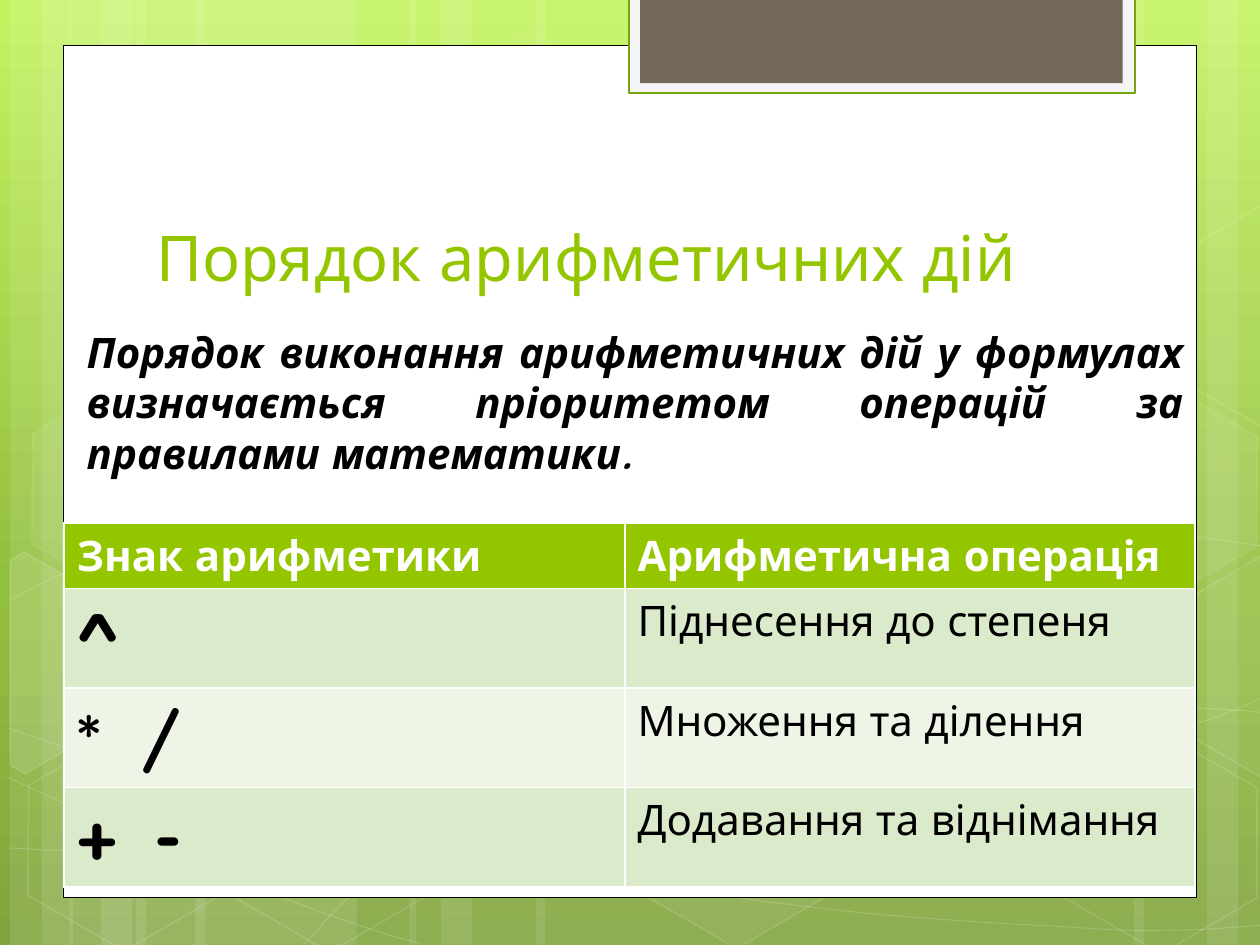
import copy
import dataclasses
import math

import lxml.etree
import pptx
import pptx.dml.color
import pptx.enum.shapes
import pptx.enum.text
import pptx.oxml.ns
import pptx.util

Inches = pptx.util.Inches
Pt = pptx.util.Pt
Shapes = pptx.enum.shapes.MSO_SHAPE
Align = pptx.enum.text.PP_ALIGN
Anchor = pptx.enum.text.MSO_ANCHOR
qn = pptx.oxml.ns.qn


@dataclasses.dataclass(frozen=True)
class Theme:
    font: str = "Quicksand"
    green: str = "94C600"
    frame_line: str = "74A510"
    white: str = "FFFFFF"
    black: str = "000000"
    tab_outer: str = "F5F5F5"
    tab_inner: str = "71685A"
    band_dark: str = "DCEACC"
    band_light: str = "EEF5E7"
    backdrop: tuple = ((0, "C3F35F"), (0.62, "93BF3F"), (1, "81A53E"))
    title_size: int = 36
    text_size: int = 24
    sign_size: int = 40


THEME = Theme()

STRIPES = [
    (1.08, 1.75), (0.08, 0.5), (0.33, 0.83), (1.55, 1.75), (0.55, 0.5), (0.8, 0.83),
    (7.33, 1.75), (9.58, 0.5), (9, 0.83), (4.25, 3.08), (3.25, 0.5), (3.5, 0.83),
]

STRAIGHT_END = (9.53, 5.62)
CURVES = [
    [(0.07, 6.73), (0.61, 6.76), (1.15, 6.79), (1.9, 6.78), (2.65, 6.77), (3.58, 6.75),
     (4.58, 6.65), (5.58, 6.55), (7, 6.36), (7.92, 6.17), (8.83, 5.98), (9.77, 5.68),
     (10.07, 5.51)],
    [(0.07, 4.77), (0.36, 4.61), (0.65, 4.46), (1.21, 4.31), (1.78, 4.16), (2.59, 3.94),
     (3.47, 3.87), (4.36, 3.8), (5.44, 3.79), (6.54, 3.87), (7.64, 3.95), (9.47, 4.26),
     (10.07, 4.34)],
    [(0.06, 6.17), (1.27, 6.72), (2.47, 7.27), (3.34, 7.49)],
    [(0.07, 5.78), (0.38, 5.89), (0.7, 6), (1.28, 6.16), (1.86, 6.31), (2.73, 6.56),
     (3.57, 6.73), (4.4, 6.9), (5.45, 7.08), (6.28, 7.18), (7.11, 7.29), (8, 7.33),
     (8.53, 7.36), (9.05, 7.4), (9.19, 7.38), (9.45, 7.38), (9.71, 7.37), (9.89, 7.35),
     (10.07, 7.34)],
    [(2.42, 7.49), (2.6, 7.29), (2.78, 7.09), (3.02, 6.91), (3.26, 6.73), (3.6, 6.53),
     (3.88, 6.39), (4.16, 6.25), (4.33, 6.19), (4.7, 6.09), (5.06, 5.99), (5.73, 5.85),
     (6.08, 5.78), (6.44, 5.71), (6.49, 5.71), (6.8, 5.69), (7.11, 5.66), (7.6, 5.63),
     (7.94, 5.62), (8.29, 5.61), (8.86, 5.62), (8.86, 5.62), STRAIGHT_END, (9.71, 5.63),
     (9.88, 5.64), (9.97, 5.65), (10.06, 5.66), (10.03, 5.65), (10.06, 5.66)],
]

HEXAGONS = [
    (3.34, 0.36, 4, 8), (4.97, 5.89, 6, 12), (0.11, 5.91, 0, 12), (0.14, 3.12, 7, 8),
    (1.74, 5.92, 0, 12), (7.53, 4.53, 10, 12), (8.34, 5.93, 0, 12), (8.34, 3.14, 7, 8),
]

CUT_HEXAGONS = [
    ([(0.08, 4.45), (0.19, 4.38), (0.96, 4.82), (0.95, 5.7), (0.2, 6.14), (0.08, 6.07)],
     (0.36, 5.35), 10),
    ([(9.26, 4.85), (10.01, 4.41), (10.09, 4.46), (10.09, 6.13), (10.02, 6.17), (9.26, 5.73)],
     (9.85, 5.2), 4),
    ([(9.26, 2.07), (10.01, 1.63), (10.1, 1.68), (10.09, 3.35), (10.02, 3.39), (9.26, 2.95)],
     (9.85, 2.41), 0),
]

TILT = 30

OPERATIONS = [
    ("Знак арифметики", "Арифметична операція", None),
    ("^", "Піднесення до степеня", None),
    ("*\t/", "Множення та ділення", 0.51),
    ("+\t-", "Додавання та віднімання", 0.62),
]


def rgb(code):
    return pptx.dml.color.RGBColor.from_string(code)


def paint(fill, code, opacity=100):
    if not opacity:
        fill.background()
        return
    fill.solid()
    fill.fore_color.rgb = rgb(code)
    if opacity < 100:
        color = fill._xPr.find(".//" + qn("a:srgbClr"))
        lxml.etree.SubElement(color, qn("a:alpha"), val=str(opacity * 1000))


def style(shape, fill, fill_opacity=100, line=None, width=0, line_opacity=100):
    shape.shadow.inherit = False
    paint(shape.fill, fill, fill_opacity)
    if line is None:
        shape.line.fill.background()
    else:
        shape.line.width = Pt(width)
        paint(shape.line.fill, line, line_opacity)


def add_block(page, kind, left, top, width, height):
    return page.shapes.add_shape(kind, Inches(left), Inches(top), Inches(width), Inches(height))


def add_outline(page, points, close):
    corners = [(Inches(x), Inches(y)) for x, y in points]
    builder = page.shapes.build_freeform(*corners[0])
    builder.add_line_segments(corners[1:], close=close)
    return builder.convert_to_shape()


def add_curve(page, knots):
    shape = add_outline(page, knots, False)
    controls = []
    for knot, segment in zip(knots[1:], shape._element.findall(".//" + qn("a:lnTo"))):
        if knot == STRAIGHT_END:
            continue
        controls.append(segment)
        if len(controls) == 3:
            bend = lxml.etree.Element(qn("a:cubicBezTo"))
            controls[0].addprevious(bend)
            for control in controls:
                bend.append(control[0])
                control.getparent().remove(control)
            controls = []
    return shape


def turn_back(point, center):
    angle = math.radians(TILT)
    x, y = point[0] - center[0], point[1] - center[1]
    return (center[0] + x * math.cos(angle) + y * math.sin(angle),
            center[1] - x * math.sin(angle) + y * math.cos(angle))


def add_backdrop(page):
    fill = page.background.fill
    fill.gradient()
    fill.gradient_angle = 270
    stop_list = page._element.find(".//" + qn("a:gsLst"))
    stop_list.append(copy.deepcopy(stop_list[0]))
    for stop, (position, code) in zip(fill.gradient_stops, THEME.backdrop):
        stop.position = position
        stop.color.rgb = rgb(code)


def add_pattern(page):
    for left, width in STRIPES:
        style(add_block(page, Shapes.RECTANGLE, left, 0, width, 7.5), THEME.white, 10)
    for knots in CURVES:
        style(add_curve(page, knots), THEME.white, 0, THEME.white, 0.5, 20)
    for left, top, fill_opacity, line_opacity in HEXAGONS:
        hexagon = add_block(page, Shapes.HEXAGON, left, top, 1.75, 1.52)
        hexagon.rotation = TILT
        hexagon.adjustments[0] = 0.285
        style(hexagon, THEME.white, fill_opacity, THEME.white, 1, line_opacity)
    for points, center, opacity in CUT_HEXAGONS:
        part = add_outline(page, [turn_back(point, center) for point in points], True)
        part.rotation = TILT
        style(part, THEME.white, opacity, THEME.white, 1, 12)


def add_frame(page):
    style(add_block(page, Shapes.RECTANGLE, 0.5, 0.36, 9, 6.76), THEME.white, 100, THEME.black, 0.5)
    style(add_block(page, Shapes.RECTANGLE, 4.99, -0.02, 4.02, 0.76), THEME.tab_outer, 100,
          THEME.frame_line, 1.25)
    style(add_block(page, Shapes.RECTANGLE, 5.08, -0.02, 3.83, 0.68), THEME.tab_inner)


def write(frame, text, size, color, bold=False, italic=False):
    frame.text = text
    para = frame.paragraphs[0]
    for span in para.runs:
        span.font.name = THEME.font
        span.font.size = Pt(size)
        span.font.bold = bold
        span.font.italic = italic
        span.font.color.rgb = rgb(color)
    return para


def add_text(page, left, top, width, height, anchor, *wording):
    box = page.shapes.add_textbox(Inches(left), Inches(top), Inches(width), Inches(height))
    box.text_frame.word_wrap = True
    box.text_frame.vertical_anchor = anchor
    return write(box.text_frame, *wording)


def set_tab_stop(para, position):
    stops = lxml.etree.SubElement(para._p.get_or_add_pPr(), qn("a:tabLst"))
    lxml.etree.SubElement(stops, qn("a:tab"), pos=str(Inches(position)), algn="l")


def add_operations(page):
    table = page.shapes.add_table(4, 2, Inches(0.51), Inches(4.15), Inches(8.97), Inches(2.89)).table
    for column, width in zip(table.columns, (4.45, 4.52)):
        column.width = Inches(width)
    for row, (*wording, tab_stop) in enumerate(OPERATIONS):
        header = row == 0
        table.rows[row].height = Inches(0.52 if header else 0.79)
        band = THEME.green if header else (THEME.band_light, THEME.band_dark)[row % 2]
        for column, text in enumerate(wording):
            cell = table.cell(row, column)
            paint(cell.fill, band)
            sign = column == 0 and not header
            para = write(cell.text_frame, text, THEME.sign_size if sign else THEME.text_size,
                         THEME.white if header else THEME.black, header or sign)
            if sign and tab_stop:
                set_tab_stop(para, tab_stop)


def main():
    deck = pptx.Presentation()
    deck.slide_width, deck.slide_height = Inches(10), Inches(7.5)
    page = deck.slides.add_slide(deck.slide_layouts[6])
    add_backdrop(page)
    add_pattern(page)
    add_frame(page)
    add_text(page, 1.14, 1.13, 7.68, 1.25, Anchor.BOTTOM,
             "Порядок арифметичних дій", THEME.title_size, THEME.green)
    rule = add_text(page, 0.51, 2.54, 8.98, 3.84, Anchor.TOP,
                    "Порядок виконання арифметичних дій у формулах визначається "
                    "пріоритетом операцій за правилами математики.",
                    THEME.text_size, THEME.black, True, True)
    rule.alignment = Align.JUSTIFY
    rule._p.get_or_add_pPr().set("marL", str(Inches(0.08)))
    add_operations(page)
    deck.save("out.pptx")


if __name__ == "__main__":
    main()
